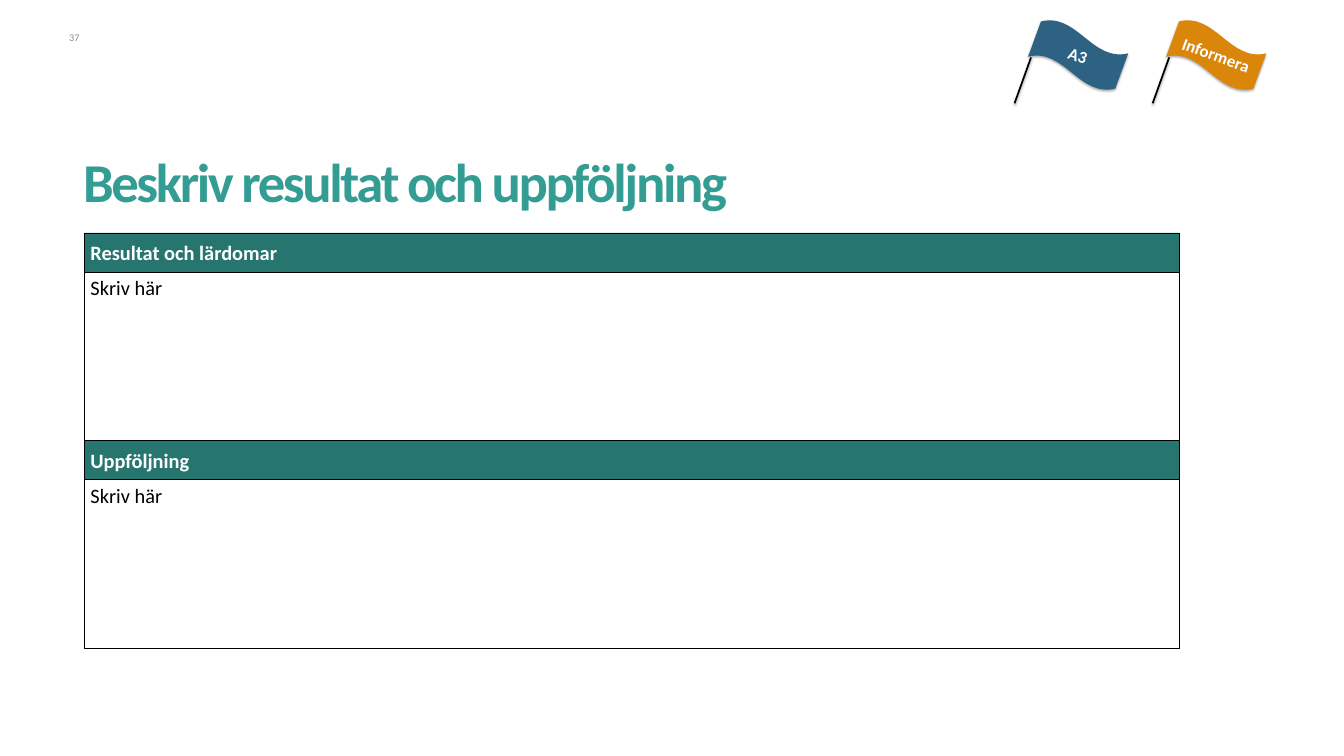
"""Build the slide about describing results and follow-up."""
from lxml.etree import SubElement
from pptx import Presentation
from pptx.dml.color import RGBColor
from pptx.enum.shapes import MSO_CONNECTOR, MSO_SHAPE
from pptx.enum.text import MSO_ANCHOR, PP_ALIGN
from pptx.oxml.ns import qn
from pptx.util import Pt


def write(shape, text, size, color, bold=False, align=PP_ALIGN.LEFT, anchor=MSO_ANCHOR.TOP):
    """Put one formatted paragraph into a shape and return the paragraph."""
    frame = shape.text_frame
    frame.word_wrap = True
    frame.vertical_anchor = anchor
    paragraph = frame.paragraphs[0]
    paragraph.text = text
    paragraph.alignment = align
    paragraph.font.name = "Calibri"
    paragraph.font.size = Pt(size)
    paragraph.font.bold = bold
    paragraph.font.color.rgb = RGBColor.from_string(color)
    return paragraph


def cast_shadow(shape, opacity, distance):
    """Give a shape a soft black shadow that falls straight down."""
    effects = SubElement(shape._element.spPr, qn("a:effectLst"))
    shadow = SubElement(effects, qn("a:outerShdw"), blurRad=str(Pt(3.1)),
                        dist=str(Pt(distance)), dir="5400000", rotWithShape="0")
    black = SubElement(shadow, qn("a:srgbClr"), val="000000")
    SubElement(black, qn("a:alpha"), val=str(opacity * 1000))


presentation = Presentation()
presentation.slide_width = Pt(1583.28)
presentation.slide_height = Pt(890.64)
slide = presentation.slides.add_slide(presentation.slide_layouts[6])

title = slide.shapes.add_textbox(Pt(97.9), Pt(96.5), Pt(1387.4), Pt(160.6))
title_frame = title.text_frame
title_frame.margin_left = title_frame.margin_top = title_frame.margin_right = 0
title_frame.margin_bottom = Pt(5.8)
heading = write(title, "Beskriv resultat och uppföljning", 64.5, "339D94", True,
                anchor=MSO_ANCHOR.BOTTOM)
heading.line_spacing = 0.85
heading.runs[0]._r.get_or_add_rPr().set("spc", "-280")

page_number = slide.shapes.add_textbox(Pt(65.5), Pt(37.4), Pt(28.1), Pt(14.4))
number_frame = page_number.text_frame
number_frame.margin_left = number_frame.margin_right = 0
number_frame.margin_top = number_frame.margin_bottom = 0
write(page_number, "37", 12, "8C8C8C", align=PP_ALIGN.RIGHT)

header_height, body_height = 46.1, 198.7
top = 274.3
for section in ("Resultat och lärdomar", "Uppföljning"):
    for text, height, fill, color in (
        (section, header_height, "26766F", "FFFFFF"),
        ("Skriv här", body_height, None, "000000"),
    ):
        box = slide.shapes.add_shape(MSO_SHAPE.RECTANGLE, Pt(99.4), Pt(top), Pt(1290.2), Pt(height))
        box.shadow.inherit = False
        box.line.color.rgb = RGBColor.from_string("000000")
        box.line.width = Pt(0.75)
        if fill:
            box.fill.solid()
            box.fill.fore_color.rgb = RGBColor.from_string(fill)
        else:
            box.fill.background()
        write(box, text, 24, color, bold=bool(fill),
              anchor=MSO_ANCHOR.MIDDLE if fill else MSO_ANCHOR.TOP)
        top += height

for left, label, color in ((1195.2, "A3", "2D6283"), (1357.9, "Informera", "DA860B")):
    flag = slide.shapes.add_group_shape()
    cloth = flag.shapes.add_shape(MSO_SHAPE.WAVE, Pt(left + 20.2), Pt(35.3), Pt(109.4), Pt(59))
    cloth.rotation = 20.1
    cloth.fill.solid()
    cloth.fill.fore_color.rgb = RGBColor.from_string(color)
    cloth.line.fill.background()
    cast_shadow(cloth, 35, 1.8)
    write(cloth, label, 20, "FFFFFF", True, PP_ALIGN.CENTER, MSO_ANCHOR.MIDDLE)
    pole = flag.shapes.add_connector(MSO_CONNECTOR.STRAIGHT, Pt(left + 19.4), Pt(67.7),
                                     Pt(left), Pt(121.7))
    pole.line.color.rgb = RGBColor.from_string("000000")
    pole.line.width = Pt(2)
    cast_shadow(pole, 38, 1.6)

presentation.save("out.pptx")
